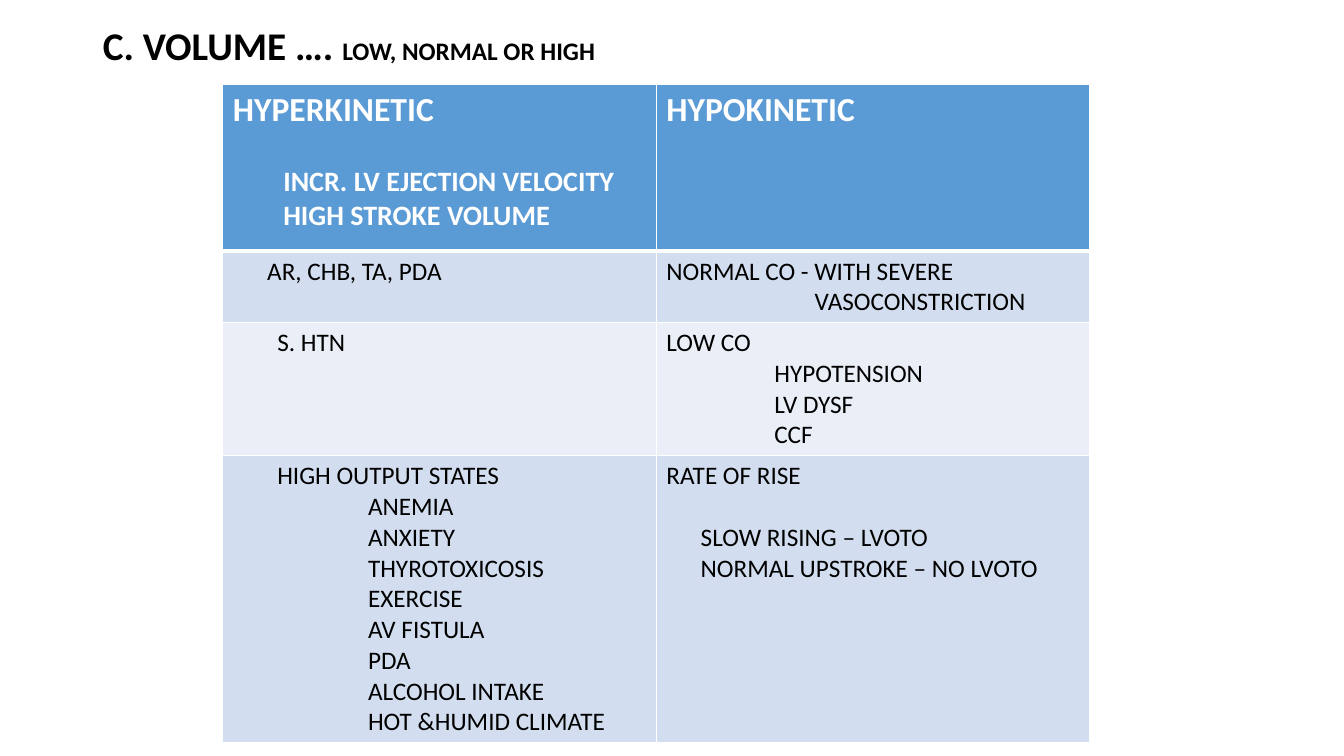
import pptx
import pptx.util
import pptx.dml.color
import pptx.enum.text
import pptx.oxml
import pptx.oxml.ns

Inches, Pt = pptx.util.Inches, pptx.util.Pt
RGB = pptx.dml.color.RGBColor.from_string

THEME = {
    "font": "Calibri",
    "ink": "000000",
    "white": "FFFFFF",
    "fills": ["5B9BD5", "D2DEEF", "EAEFF7", "D2DEEF"],
    "title": 28,
    "subtitle": 18,
    "head": 24,
    "subhead": 20,
    "body": 18,
    "rule": 1,
    "head_rule": 3,
}

TITLE = [("C. VOLUME …. ", "title"), ("LOW, NORMAL OR HIGH", "subtitle")]
TITLE_BOX = (0.92, 0, 5.59, 0.95)
TABLE_BOX = (2.21, 0.84, 8.6, 6.5)
ROW_HEIGHTS = [1.65, 0.71, 1.31, 2.83]

CAUSES = ["ANEMIA", "ANXIETY", "THYROTOXICOSIS", "EXERCISE", "AV FISTULA",
          "PDA", "ALCOHOL INTAKE", "HOT &HUMID CLIMATE"]
LOW_CO = ["HYPOTENSION", "LV DYSF", "CCF"]

# PLACEHOLDER
ROWS = [
    [[("HYPERKINETIC", 0, 0, "head"),
      ("INCR. LV EJECTION VELOCITY", 0.5, 24.4, "subhead"),
      ("HIGH STROKE VOLUME", 0.5, 0, "subhead")],
     [("HYPOKINETIC", 0, 0, "head")]],
    [[("AR, CHB, TA, PDA", 0.34, 0, "body")],
     [("NORMAL CO - WITH SEVERE", 0, 0, "body"),
      ("VASOCONSTRICTION", 1.47, 0, "body")]],
    [[("S. HTN", 0.44, 0, "body")],
     [("LOW CO", 0, 0, "body")] + [(t, 1.07, 0, "body") for t in LOW_CO]],
    [[("HIGH OUTPUT STATES", 0.44, 0, "body")]
     + [(t, 1.34, 0, "body") for t in CAUSES],
     [("RATE OF RISE", 0, 0, "body"),
      ("SLOW RISING – LVOTO", 0.34, 22, "body"),
      ("NORMAL UPSTROKE – NO LVOTO", 0.34, 0, "body")]],
]


def add_run(p, text, size, color, bold):
    r = p.add_run()
    r.text = text
    for name, value in {"name": THEME["font"], "size": Pt(THEME[size]), "bold": bold}.items():
        setattr(r.font, name, value)
    r.font.color.rgb = RGB(THEME[color])


def set_borders(cell, widths):
    tcPr = cell._tc.get_or_add_tcPr()
    for i, (side, width) in enumerate(widths.items()):
        tcPr.insert(i, pptx.oxml.parse_xml(
            f'<a:ln{side} {pptx.oxml.ns.nsdecls("a")} w="{Pt(width)}"><a:solidFill>'
            f'<a:srgbClr val="{THEME["white"]}"/></a:solidFill></a:ln{side}>'))


def fill_cell(cell, lines, row):
    cell.fill.solid()
    cell.fill.fore_color.rgb = RGB(THEME["fills"][row])
    rule, head_rule = THEME["rule"], THEME["head_rule"]
    set_borders(cell, {"L": rule, "R": rule,
                       "T": head_rule if row == 1 else rule,
                       "B": head_rule if row == 0 else rule})
    tf = cell.text_frame
    for i, (text, indent, gap, size) in enumerate(lines):
        p = tf.paragraphs[0] if i == 0 else tf.add_paragraph()
        p.space_before = Pt(gap)
        pPr = p._p.get_or_add_pPr()
        pPr.set("marL", str(Inches(indent)))
        pPr.set("indent", "0")
        add_run(p, text, size, "white" if row == 0 else "ink", row == 0)


def add_title(s):
    sp = s.shapes.title
    for name, value in zip(("left", "top", "width", "height"), TITLE_BOX):
        setattr(sp, name, Inches(value))
    tf = sp.text_frame
    for name, value in {"vertical_anchor": pptx.enum.text.MSO_ANCHOR.MIDDLE,
                        "word_wrap": True,
                        "auto_size": pptx.enum.text.MSO_AUTO_SIZE.NONE}.items():
        setattr(tf, name, value)
    p = tf.paragraphs[0]
    p.alignment = pptx.enum.text.PP_ALIGN.LEFT
    p.line_spacing = 0.9
    for text, size in TITLE:
        add_run(p, text, size, "ink", True)


def add_pulse_table(s):
    table = s.shapes.add_table(len(ROWS), len(ROWS[0]), *map(Inches, TABLE_BOX)).table
    for column in table.columns:
        column.width = Inches(TABLE_BOX[2] / len(ROWS[0]))
    for row, cells in enumerate(ROWS):
        table.rows[row].height = Inches(ROW_HEIGHTS[row])
        for col, lines in enumerate(cells):
            fill_cell(table.cell(row, col), lines, row)


def main():
    prs = pptx.Presentation()
    prs.slide_width, prs.slide_height = Inches(13.33), Inches(7.5)
    s = prs.slides.add_slide(prs.slide_layouts[5])
    add_title(s)
    add_pulse_table(s)
    prs.save("out.pptx")


if __name__ == "__main__":
    main()
